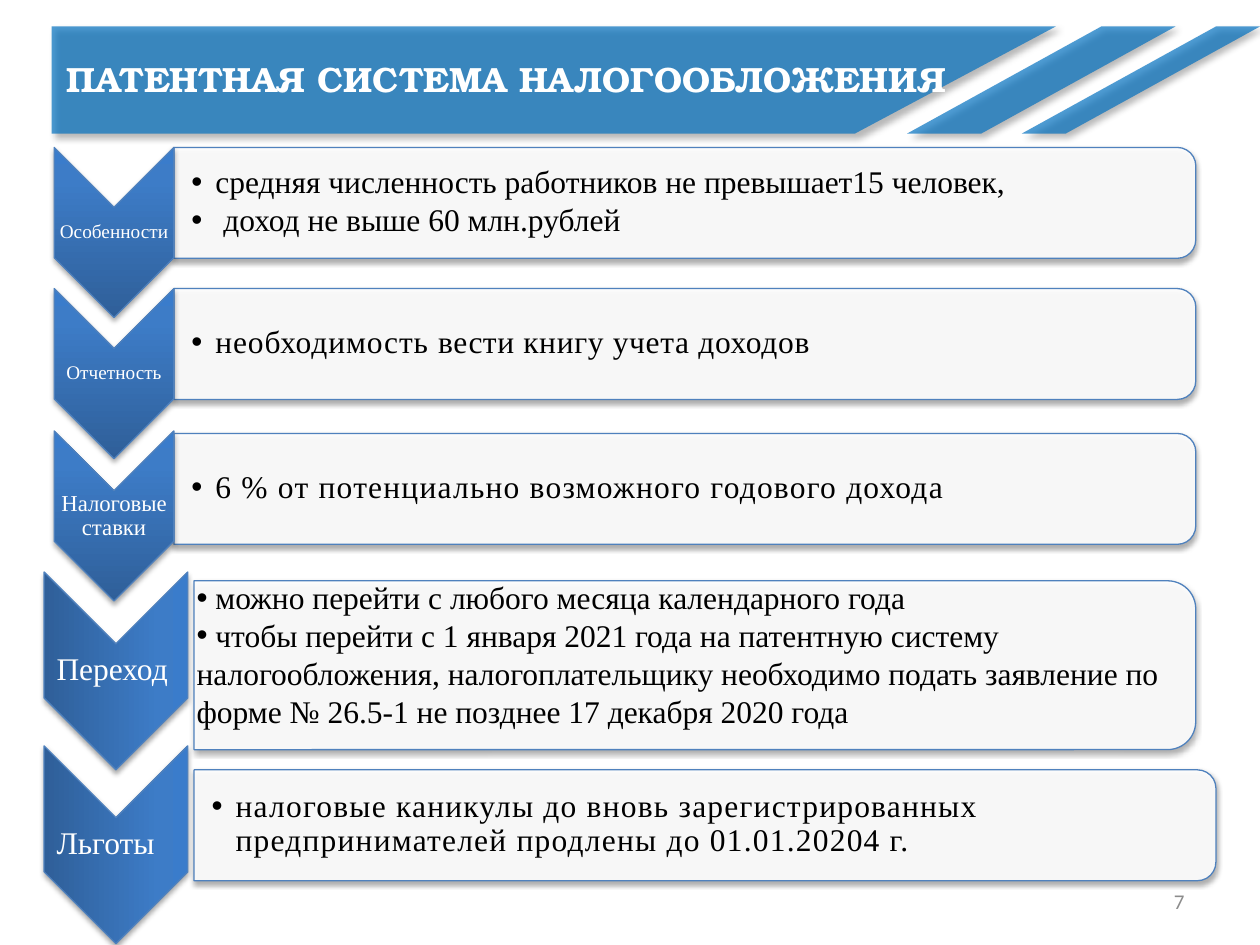
from dataclasses import dataclass
from typing import NamedTuple

from lxml import etree
from pptx import Presentation
from pptx.dml.color import RGBColor
from pptx.enum import shapes as kinds, text as t
from pptx.oxml import ns
from pptx.util import Inches, Pt

BANNER_BLUE = RGBColor(0x00, 0x70, 0xC0)
ROW_LINE = RGBColor(0x4F, 0x81, 0xBD)
WHITE = RGBColor(0xFF, 0xFF, 0xFF)
BLACK = RGBColor(0x00, 0x00, 0x00)
PAGE_GRAY = RGBColor(0x8C, 0x8C, 0x8C)
CHEVRON_STOPS = ((0, RGBColor(0x2F, 0x5F, 0x99)), (80, RGBColor(0x3D, 0x7C, 0xC7)),
                 (100, RGBColor(0x3A, 0x7C, 0xCB)))
SERIF = "Times New Roman"
TITLE_FONT = "TeX Gyre Bonum"


class Box(NamedTuple):
    left: float
    top: float
    width: float
    height: float


class Shadow(NamedTuple):
    opacity: int
    blur: float
    distance: float
    angle: int


class Piece(NamedTuple):
    """A stretch of text with its letter spacing in points."""
    words: str
    spacing: float = 0


BANNER_SHADOW = Shadow(40, 4, 3, 45)
ROW_SHADOW = Shadow(35, 3.1, 1.8, 90)


@dataclass
class Row:
    label: str
    label_size: int
    chevron: Box
    panel: Box
    points: list[list[Piece]]
    large: bool = False


def small_row(label: str, size: int, chevron_top: float, panel_top: float,
              points: list[list[Piece]]) -> Row:
    return Row(label, size, Box(0.43, chevron_top, 0.95, 1.35),
               Box(1.38, panel_top, 8.11, 0.88), points)


def large_row(label: str, chevron_top: float, panel: Box, points: list[list[Piece]]) -> Row:
    return Row(label, 18, Box(0.35, chevron_top, 1.14, 1.57), panel, points, True)


ROWS = [
    small_row("Особенности", 11, 1.17, 1.17, [
        [Piece("средняя численность работников не превышает15 человек,")],
        [Piece(" доход не выше 60 млн.рублей")]]),
    small_row("Отчетность", 11, 2.29, 2.29, [
        [Piece("необходимость ", 0.5), Piece("вести ", 0.3), Piece("книгу учета доходов", 0.4)]]),
    small_row("Налоговые ставки", 13, 3.42, 3.44, [
        [Piece("6 % от потенциально возможного годового дохода", 0.7)]]),
    large_row("Переход", 4.54, Box(1.54, 4.61, 7.95, 1.34), [
        [Piece(" можно перейти с любого месяца календарного года")],
        [Piece(" чтобы перейти с 1 января 2021 года на патентную систему налогообложения, "
               "налогоплательщику необходимо подать заявление по форме № 26.5-1 "
               "не позднее 17 декабря 2020 года")]]),
    large_row("Льготы", 5.92, Box(1.54, 6.11, 8.11, 0.88), [
        [Piece("налоговые каникулы до вновь зарегистрированных предпринимателей "
               "продлены до 01.01.20204 г.", 0.7)]]),
]
TRANSITION = ROWS[3]


def add_child(parent, tag: str, **attributes):
    child = etree.SubElement(parent, ns.qn(tag))
    for name, value in attributes.items():
        child.set(name, str(value))
    return child


def place(shape, box: Box) -> None:
    shape.left, shape.top, shape.width, shape.height = map(Inches, box)


def add_outline(slide, kind, box: Box, shadow: Shadow, turned: bool = False):
    """Add a shape that covers box, turned by 90 degrees if asked."""
    if turned:
        shift = (box.width - box.height) / 2
        box = Box(box.left + shift, box.top - shift, box.height, box.width)
    shape = slide.shapes.add_shape(kind, *map(Inches, box))
    shape.rotation = 90 if turned else 0
    shape.line.fill.background()
    shape.shadow.inherit = False
    effects = shape._element.spPr.find(ns.qn("a:effectLst"))
    outer = add_child(effects, "a:outerShdw", blurRad=Pt(shadow.blur), dist=Pt(shadow.distance),
                      dir=shadow.angle * 60000, algn="ctr", rotWithShape=0)
    add_child(add_child(outer, "a:srgbClr", val=BLACK), "a:alpha", val=shadow.opacity * 1000)
    return shape


def fill_tinted(shape, color: RGBColor, opacity: int) -> None:
    shape.fill.solid()
    shape.fill.fore_color.rgb = color
    solid = shape._element.spPr.find(ns.qn("a:solidFill"))
    add_child(solid[0], "a:alpha", val=opacity * 1000)


def fill_gradient(shape, turns: bool) -> None:
    shape.fill.gradient()
    shape.fill.gradient_angle = 90
    gradient = shape._element.spPr.find(ns.qn("a:gradFill"))
    gradient.set("rotWithShape", str(int(turns)))
    stops = gradient.find(ns.qn("a:gsLst"))
    for stop in list(stops):
        stops.remove(stop)
    for position, color in CHEVRON_STOPS:
        add_child(add_child(stops, "a:gs", pos=position * 1000), "a:srgbClr", val=color)


def draw_line(shape) -> None:
    shape.line.color.rgb = ROW_LINE
    shape.line.width = Pt(0.75)


def prepare_frame(shape, anchor=t.MSO_ANCHOR.TOP, insets=(0.1, 0.05, 0.1, 0.05)):
    frame = shape.text_frame
    frame.word_wrap = True
    frame.auto_size = t.MSO_AUTO_SIZE.NONE
    frame.vertical_anchor = anchor
    (frame.margin_left, frame.margin_top,
     frame.margin_right, frame.margin_bottom) = map(Inches, insets)
    return frame


def add_text(slide, box: Box, **frame_options):
    return prepare_frame(slide.shapes.add_textbox(*map(Inches, box)), **frame_options)


def write(paragraph, piece: Piece, size: int, color: RGBColor, font: str = SERIF,
          bold: bool = False) -> None:
    run = paragraph.add_run()
    run.text = piece.words
    run.font.size, run.font.name, run.font.bold = Pt(size), font, bold
    run.font.color.rgb = color
    if piece.spacing:
        run._r.get_or_add_rPr().set("spc", str(round(piece.spacing * 100)))


def write_points(frame, points: list[list[Piece]], indent: float) -> None:
    for index, pieces in enumerate(points):
        paragraph = frame.add_paragraph() if index else frame.paragraphs[0]
        paragraph.alignment = t.PP_ALIGN.LEFT
        paragraph.space_before = Pt(0)
        if indent:
            paragraph.line_spacing = 0.9
            paragraph.space_after = Pt(2.5)
        properties = paragraph._p.get_or_add_pPr()
        properties.set("marL", str(Inches(indent)))
        properties.set("indent", str(-Inches(indent)))
        add_child(properties, "a:buFont", typeface="Arial")
        add_child(properties, "a:buChar", char="•")
        for piece in pieces:
            write(paragraph, piece, 18, BLACK)


def draw_banner(slide) -> None:
    front = add_outline(slide, kinds.MSO_SHAPE.FLOWCHART_MANUAL_INPUT,
                        Box(0.41, 0.21, 7.97, 0.85), BANNER_SHADOW, turned=True)
    front._element.spPr.xfrm.set("flipH", "1")
    fill_tinted(front, BANNER_BLUE, 69)
    for left, width in ((7.2, 2.13), (8.11, 1.89)):
        stripe = add_outline(slide, kinds.MSO_SHAPE.PARALLELOGRAM,
                             Box(left, 0.21, width, 0.85), BANNER_SHADOW)
        stripe.adjustments[0] = 1.813
        fill_tinted(stripe, BANNER_BLUE, 69)


def draw_row(slide, row: Row, body) -> None:
    panel = add_outline(slide, kinds.MSO_SHAPE.ROUND_2_SAME_RECTANGLE, row.panel,
                        ROW_SHADOW, turned=True)
    fill_tinted(panel, WHITE, 90)
    draw_line(panel)
    chevron = add_outline(slide, kinds.MSO_SHAPE.CHEVRON, row.chevron, ROW_SHADOW, turned=True)
    fill_gradient(chevron, row.large)
    draw_line(chevron)

    if row is TRANSITION:
        slide.shapes._spTree.append(body._element)
        place(body, Box(1.46, 4.54, 8.03, 1.62))
        write_points(prepare_frame(body), row.points, 0)
    else:
        area = Box(row.panel.left, row.panel.top + 0.04, 8.07, 0.79)
        frame = add_text(slide, area, anchor=t.MSO_ANCHOR.MIDDLE, insets=(0.14, 0.01, 0.01, 0.01))
        write_points(frame, row.points, 0.19)

    if row.large:
        label = add_text(slide, Box(0.35, row.chevron.top + 0.56, 1.18, 0.4))
    else:
        label = add_text(slide, Box(0.43, row.chevron.top + 0.47, 0.95, 0.41),
                         anchor=t.MSO_ANCHOR.MIDDLE, insets=(0.01,) * 4)
        label.paragraphs[0].alignment = t.PP_ALIGN.CENTER
        label.paragraphs[0].line_spacing = 0.9
    write(label.paragraphs[0], Piece(row.label), row.label_size, WHITE)


def main() -> None:
    deck = Presentation()
    deck.slide_width, deck.slide_height = Inches(10), Inches(7.5)
    slide = deck.slides.add_slide(deck.slide_layouts[1])
    title, body = slide.placeholders
    page = add_text(slide, Box(7.17, 6.95, 2.33, 0.4), anchor=t.MSO_ANCHOR.MIDDLE).paragraphs[0]
    page.alignment = t.PP_ALIGN.RIGHT
    write(page, Piece("7"), 12, PAGE_GRAY, "Calibri")
    draw_banner(slide)
    slide.shapes._spTree.append(title._element)
    place(title, Box(0.43, 0.41, 7.28, 0.44))
    heading = prepare_frame(title).paragraphs[0]
    heading.alignment = t.PP_ALIGN.LEFT
    write(heading, Piece("ПАТЕНТНАЯ СИСТЕМА НАЛОГООБЛОЖЕНИЯ"), 20, WHITE, TITLE_FONT, bold=True)
    for row in ROWS:
        draw_row(slide, row, body)
    deck.save("out.pptx")


if __name__ == "__main__":
    main()
